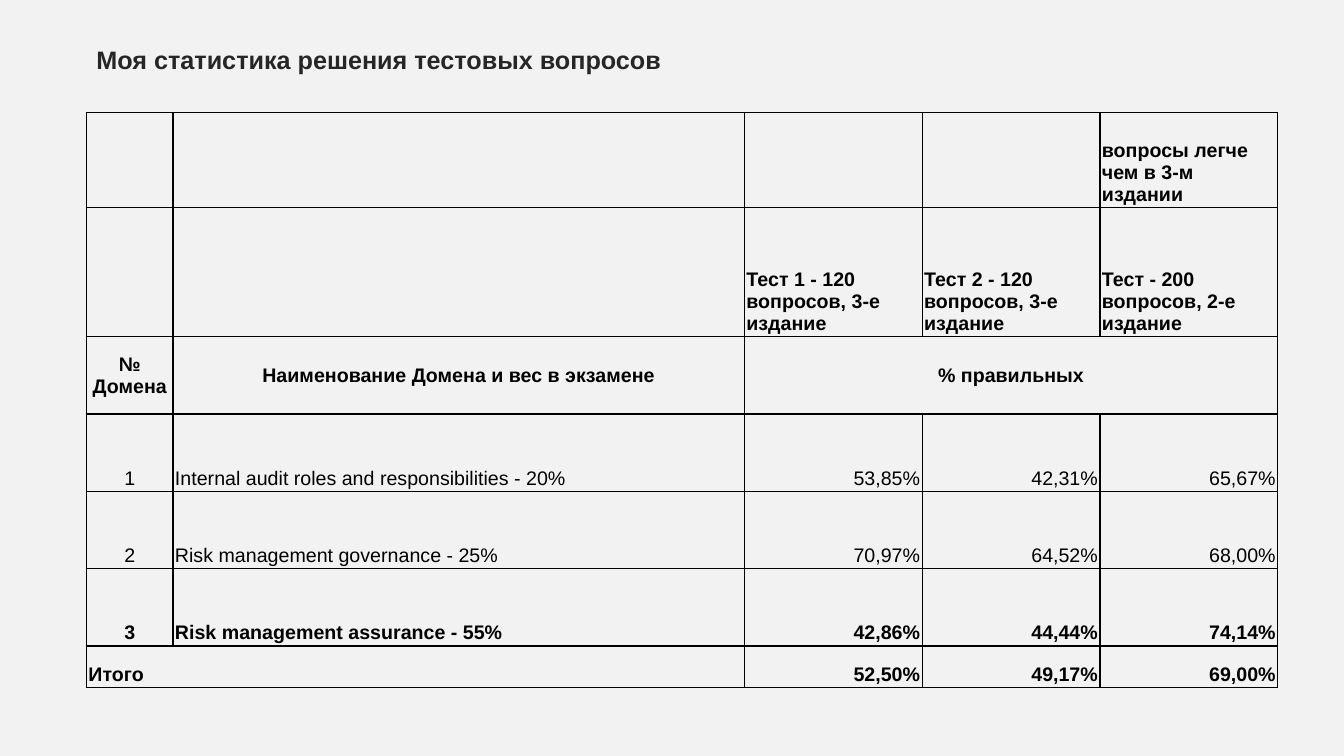
import pptx
import pptx.dml.color
import pptx.enum.text
import pptx.oxml
import pptx.oxml.ns
import pptx.util

Cm, Pt = pptx.util.Cm, pptx.util.Pt
LEFT, CENTER, RIGHT = (pptx.enum.text.PP_ALIGN.LEFT, pptx.enum.text.PP_ALIGN.CENTER,
                       pptx.enum.text.PP_ALIGN.RIGHT)
BOTTOM, MIDDLE = pptx.enum.text.MSO_ANCHOR.BOTTOM, pptx.enum.text.MSO_ANCHOR.MIDDLE

COLORS = {"background": "F2F2F2", "title": "262626", "text": "000000", "border": "000000"}
FONT = "Arial"
COLUMN_WIDTHS = [2.18, 14.4, 4.48, 4.48, 4.48]
ROW_HEIGHTS = [2.39, 3.25] + [1.95] * 4 + [1.04]
ROWS = [
    ["", "", "", "", "вопросы легче чем в 3-м издании"],
    ["", "", "Тест 1 - 120 вопросов, 3-е издание", "Тест 2 - 120 вопросов, 3-е издание",
     "Тест - 200 вопросов, 2-е издание"],
    ["№ Домена", "Наименование Домена и вес в экзамене", "% правильных", "", ""],
    ["1", "Internal audit roles and responsibilities - 20%", "53,85%", "42,31%", "65,67%"],
    ["2", "Risk management governance - 25%", "70,97%", "64,52%", "68,00%"],
    ["3", "Risk management assurance - 55%", "42,86%", "44,44%", "74,14%"],
    ["Итого", "", "52,50%", "49,17%", "69,00%"],
]
HEADING_ROW, TOTAL_ROW = 2, 6
REGULAR_ROWS = (3, 4)


def rgb(name):
    return pptx.dml.color.RGBColor.from_string(COLORS[name])


def style(p, size, color, bold=True, align=LEFT):
    p.alignment = align
    p.font.name, p.font.size, p.font.bold = FONT, Pt(size), bold
    p.font.color.rgb = rgb(color)


def add_title(slide, text):
    sp = slide.shapes.add_textbox(Cm(2.18), Cm(0.99), Cm(29.21), Cm(1.47))
    tf = sp.text_frame
    tf.word_wrap = True
    p = tf.paragraphs[0]
    p.text = text
    style(p, 18, "title")


def add_borders(cell):
    tc_pr = cell._tc.get_or_add_tcPr()
    for side in "LRTB":
        tc_pr.append(pptx.oxml.parse_xml(
            f'<a:ln{side} {pptx.oxml.ns.nsdecls("a")} w="{Pt(1)}"><a:solidFill>'
            f'<a:srgbClr val="{COLORS["border"]}"/></a:solidFill></a:ln{side}>'))


def cell_align(row, col):
    if row == HEADING_ROW:
        return CENTER
    if row < HEADING_ROW:
        return LEFT
    if col >= 2:
        return RIGHT
    return CENTER if col == 0 and row != TOTAL_ROW else LEFT


def fill_cell(cell, text, row, col):
    add_borders(cell)
    cell.fill.background()
    cell.margin_left = cell.margin_right = cell.margin_top = cell.margin_bottom = Cm(0.05)
    cell.vertical_anchor = MIDDLE if row == HEADING_ROW else BOTTOM
    p = cell.text_frame.paragraphs[0]
    p.text = text
    style(p, 14, "text", row not in REGULAR_ROWS, cell_align(row, col))


def add_results_table(slide):
    frame = slide.shapes.add_table(len(ROWS), len(COLUMN_WIDTHS), Cm(2.18), Cm(2.84),
                                   Cm(sum(COLUMN_WIDTHS)), Cm(sum(ROW_HEIGHTS)))
    table = frame.table
    table.first_row = table.horz_banding = False
    for column, width in zip(table.columns, COLUMN_WIDTHS):
        column.width = Cm(width)
    for table_row, height in zip(table.rows, ROW_HEIGHTS):
        table_row.height = Cm(height)
    for row, texts in enumerate(ROWS):
        for col, text in enumerate(texts):
            fill_cell(table.cell(row, col), text, row, col)
    # Joined cells
    table.cell(HEADING_ROW, 2).merge(table.cell(HEADING_ROW, 4))
    table.cell(TOTAL_ROW, 0).merge(table.cell(TOTAL_ROW, 1))


def main():
    prs = pptx.Presentation()
    prs.slide_width, prs.slide_height = Cm(33.87), Cm(19.05)
    slide = prs.slides.add_slide(prs.slide_layouts[6])
    # Background
    slide.background.fill.solid()
    slide.background.fill.fore_color.rgb = rgb("background")
    # Content
    add_title(slide, "Моя статистика решения тестовых вопросов")
    add_results_table(slide)
    prs.save("out.pptx")


if __name__ == "__main__":
    main()
